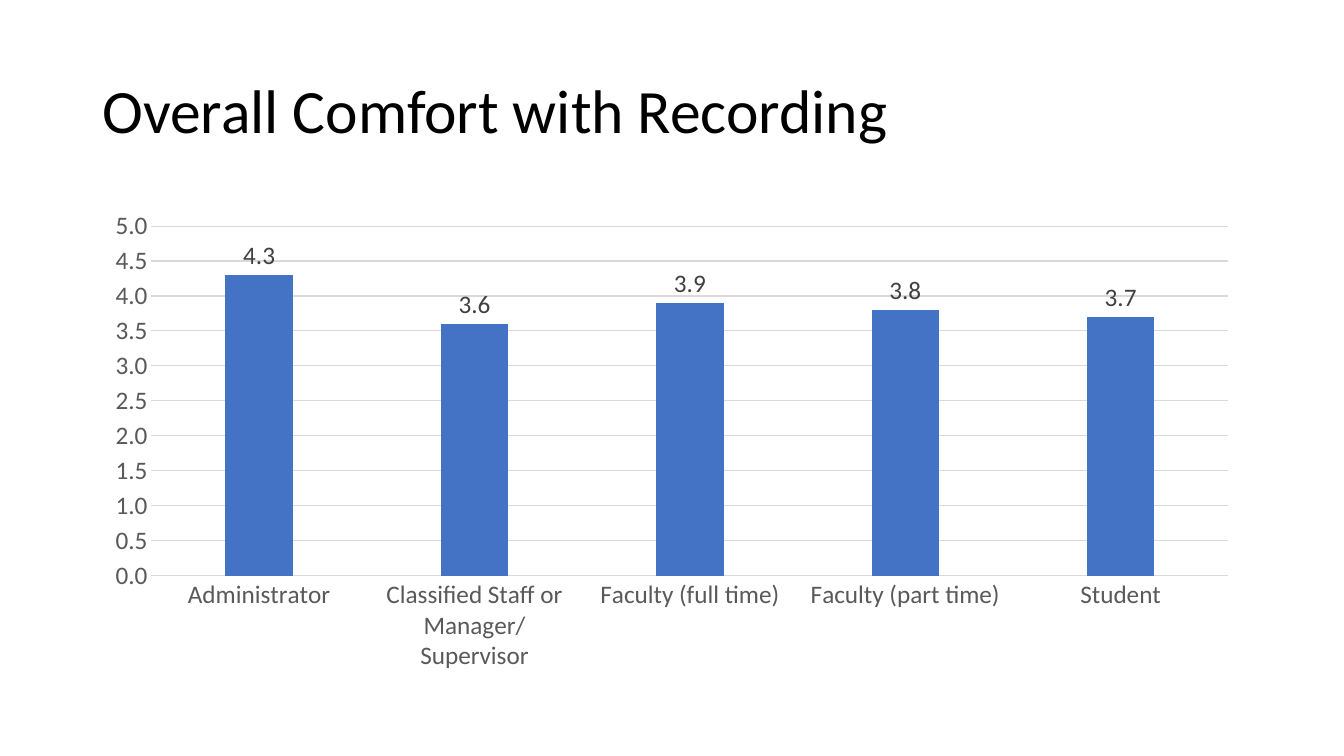
"""Build the slide on overall comfort with recording."""
from dataclasses import dataclass
from typing import NamedTuple

from pptx import Presentation
from pptx.chart.axis import CategoryAxis, ValueAxis
from pptx.chart.data import CategoryChartData
from pptx.dml.color import RGBColor
from pptx.enum.chart import XL_CHART_TYPE, XL_LABEL_POSITION, XL_TICK_MARK
from pptx.enum.text import MSO_ANCHOR
from pptx.slide import Slide
from pptx.text.text import Font
from pptx.util import Pt


@dataclass(frozen=True)
class Theme:
    """Colours, type sizes and line width of the slide."""
    face: str = "Calibri"
    title_size: float = 44
    chart_size: float = 18
    line_width: float = 0.75
    background: str = "FFFFFF"
    title: str = "000000"
    axis: str = "595959"
    label: str = "404040"
    grid: str = "D9D9D9"
    bar: str = "4472C4"


class Frame(NamedTuple):
    """Position and size in points."""
    left: float
    top: float
    width: float
    height: float

    def lengths(self) -> tuple[Pt, ...]:
        """Return the four lengths for python-pptx."""
        return tuple(Pt(value) for value in self)


class Rating(NamedTuple):
    """Mean comfort of one group."""
    group: str
    score: float


THEME = Theme()
TITLE_FRAME = Frame(66, 28.75, 828, 104.4)
CHART_FRAME = Frame(66, 143.75, 828, 342.6)
RATINGS = (
    Rating("Administrator", 4.3),
    Rating("Classified Staff or Manager/Supervisor", 3.6),
    Rating("Faculty (full time)", 3.9),
    Rating("Faculty (part time)", 3.8),
    Rating("Student", 3.7),
)


def style_font(font: Font, *, size: float, color: str) -> None:
    """Apply the theme face with a size and colour."""
    font.name = THEME.face
    font.size = Pt(size)
    font.bold = False
    font.color.rgb = RGBColor.from_string(color)


def add_text(page: Slide, text: str, *, frame: Frame, size: float,
             color: str, line_spacing: float) -> None:
    """Add a vertically centred text box."""
    box = page.shapes.add_textbox(*frame.lengths())
    box.text_frame.word_wrap = True
    box.text_frame.vertical_anchor = MSO_ANCHOR.MIDDLE
    para = box.text_frame.paragraphs[0]
    para.line_spacing = line_spacing
    span = para.add_run()
    span.text = text
    style_font(span.font, size=size, color=color)


def style_axis(axis: CategoryAxis | ValueAxis) -> None:
    """Remove tick marks and style the axis labels."""
    axis.major_tick_mark = XL_TICK_MARK.NONE
    axis.minor_tick_mark = XL_TICK_MARK.NONE
    style_font(axis.tick_labels.font, size=THEME.chart_size, color=THEME.axis)


def add_rating_chart(page: Slide, ratings: tuple[Rating, ...], frame: Frame) -> None:
    """Add the column chart of ratings."""
    table = CategoryChartData(number_format="0.0")
    table.categories = [rating.group for rating in ratings]
    table.add_series("Series 1", [rating.score for rating in ratings])
    chart = page.shapes.add_chart(
        XL_CHART_TYPE.COLUMN_CLUSTERED, *frame.lengths(), table).chart
    chart.has_title = False
    chart.has_legend = False
    style_font(chart.font, size=THEME.chart_size, color=THEME.title)

    groups, scores = chart.category_axis, chart.value_axis
    for axis in (groups, scores):
        style_axis(axis)
    scores.minimum_scale, scores.maximum_scale, scores.major_unit = 0, 5, 0.5
    scores.tick_labels.number_format = "0.0"
    scores.tick_labels.number_format_is_linked = False
    scores.format.line.fill.background()
    for line in (groups.format.line, scores.major_gridlines.format.line):
        line.color.rgb = RGBColor.from_string(THEME.grid)
        line.width = Pt(THEME.line_width)

    plot = chart.plots[0]
    plot.vary_by_categories = False
    plot.gap_width, plot.overlap = 219, -27
    bars = plot.series[0]
    bars.format.fill.solid()
    bars.format.fill.fore_color.rgb = RGBColor.from_string(THEME.bar)
    labels = bars.data_labels
    labels.show_value = True
    labels.position = XL_LABEL_POSITION.OUTSIDE_END
    labels.number_format = "0.0"
    labels.number_format_is_linked = False
    style_font(labels.font, size=THEME.chart_size, color=THEME.label)


def main() -> None:
    """Create and save the deck."""
    deck = Presentation()
    deck.slide_width, deck.slide_height = Pt(960), Pt(540)
    page = deck.slides.add_slide(deck.slide_layouts[6])
    page.background.fill.solid()
    page.background.fill.fore_color.rgb = RGBColor.from_string(THEME.background)
    add_text(page, "Overall Comfort with Recording", frame=TITLE_FRAME,
             size=THEME.title_size, color=THEME.title, line_spacing=0.9)
    add_rating_chart(page, RATINGS, CHART_FRAME)
    deck.save("out.pptx")


if __name__ == "__main__":
    main()
